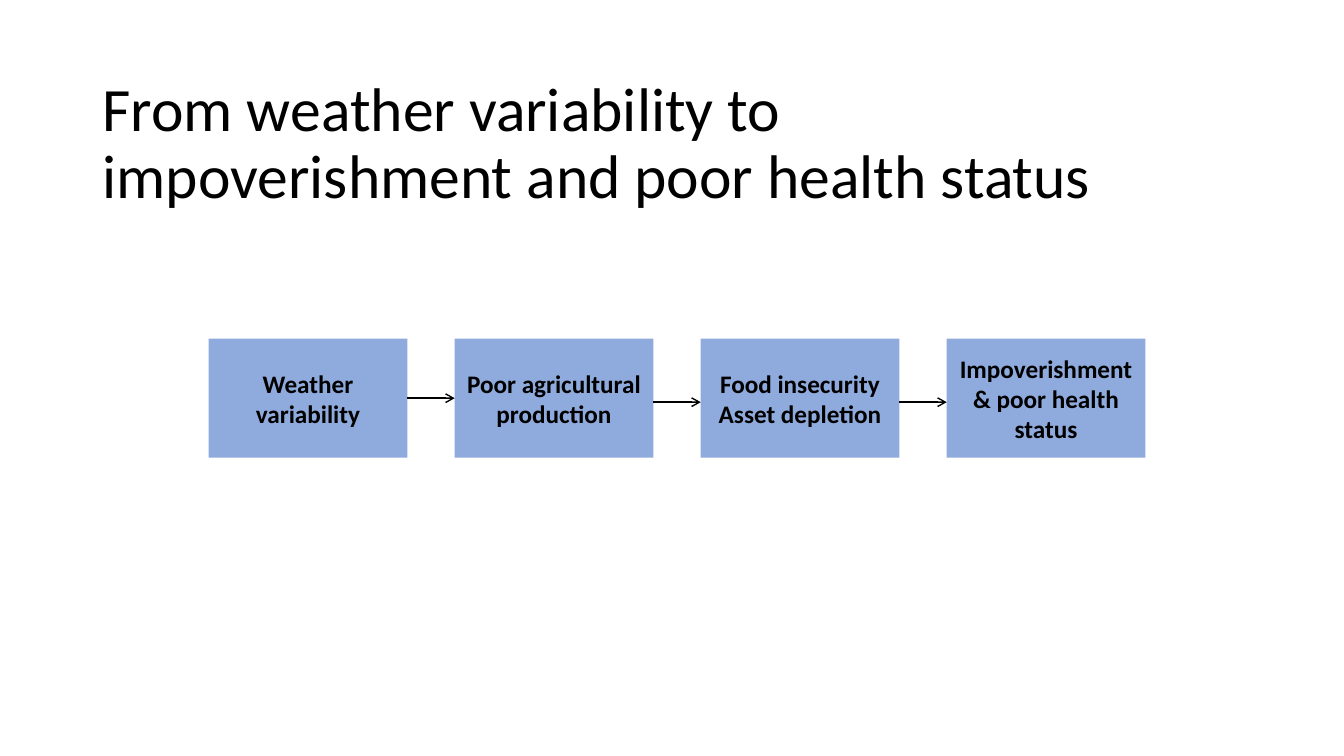
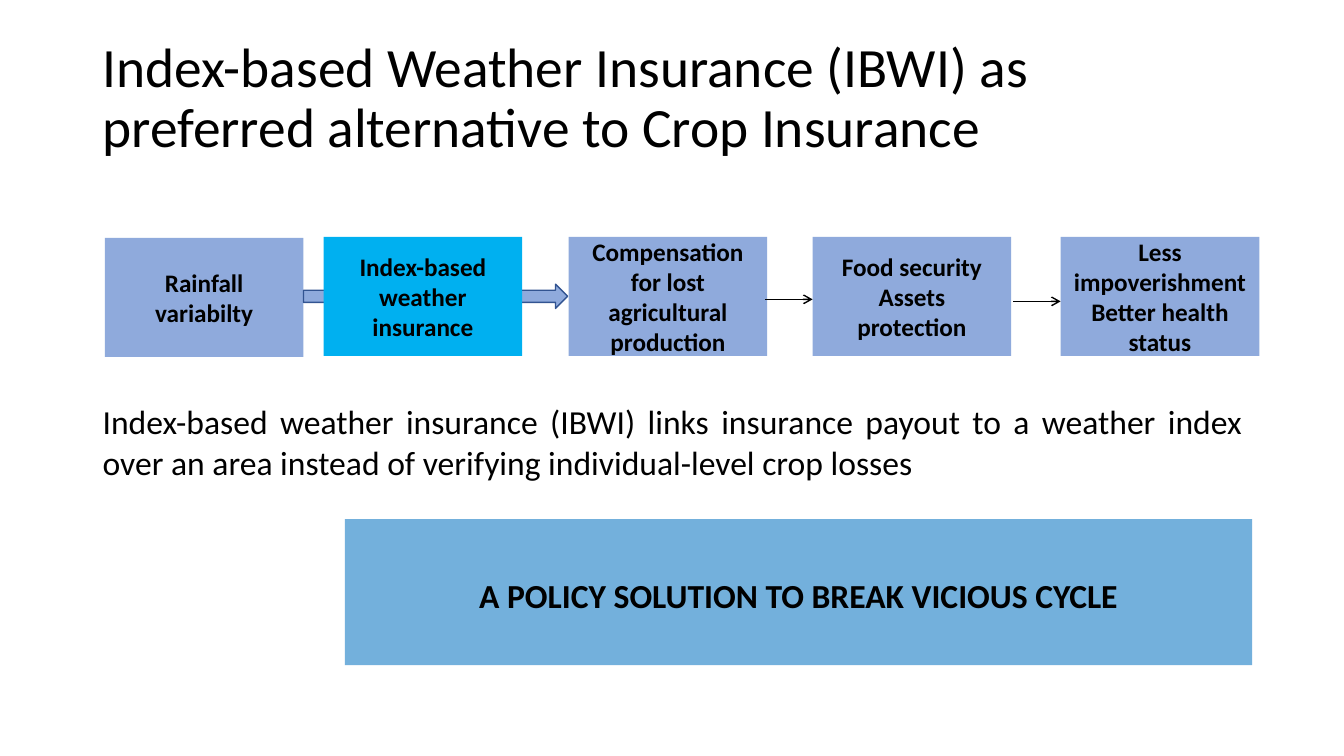
from lxml.etree import SubElement
from pptx import Presentation
from pptx.dml.color import RGBColor
from pptx.enum.shapes import MSO_CONNECTOR, MSO_SHAPE
from pptx.enum.text import MSO_ANCHOR, PP_ALIGN
from pptx.oxml.ns import qn
from pptx.util import Pt

PX = 9144  # EMU in one px; 100 px make an inch
FONT = "Calibri"
COLORS = {
    "text": "000000",
    "step": "8FAADC",
    "insurance": "00B0F0",
    "policy": "0070C0",
    "outline": "325491",
}
STEP_W, STEP_H, ARROW_LENGTH = 197, 118, 47
TITLE_LEFT = 92


def px(*lengths):
    return [length * PX for length in lengths]


def rgb(name):
    return RGBColor.from_string(COLORS[name])


def write(text_frame, text, size, bold=False, align=PP_ALIGN.LEFT,
          anchor=MSO_ANCHOR.MIDDLE, line_spacing=1.0):
    text_frame.word_wrap = True
    text_frame.vertical_anchor = anchor
    text_frame.text = text
    for paragraph in text_frame.paragraphs:
        paragraph.alignment = align
        paragraph.line_spacing = line_spacing
        for run in paragraph.runs:
            run.font.name = FONT
            run.font.size = Pt(size)
            run.font.bold = bold
            run.font.color.rgb = rgb("text")


def add_title(slide, text, size, box):
    title = slide.shapes.add_textbox(*px(*box))
    write(title.text_frame, text, size, line_spacing=0.9)


def add_block(slide, box, fill, kind=MSO_SHAPE.RECTANGLE):
    block = slide.shapes.add_shape(kind, *px(*box))
    block.shadow.inherit = False
    block.fill.solid()
    block.fill.fore_color.rgb = rgb(fill)
    block.line.fill.background()
    return block


def add_step(slide, left, top, text, fill="step"):
    step = add_block(slide, (left, top, STEP_W, STEP_H), fill)
    write(step.text_frame, text, 18, bold=True, align=PP_ALIGN.CENTER)


def add_arrow(slide, tip, y):
    """Thin arrow whose tip touches the left side of a step."""
    arrow = slide.shapes.add_connector(
        MSO_CONNECTOR.STRAIGHT, *px(tip - ARROW_LENGTH, y, tip, y))
    arrow.line.color.rgb = rgb("text")
    arrow.line.width = Pt(1)
    properties = arrow._element.spPr
    SubElement(properties.find(qn("a:ln")), qn("a:tailEnd"), type="arrow")
    SubElement(properties, qn("a:effectLst"))


def add_insurance_arrow(slide, left, top):
    """Wide arrow that passes behind the insurance step."""
    arrow = add_block(slide, (left, top, 262, 24), "step", MSO_SHAPE.RIGHT_ARROW)
    arrow.line.color.rgb = rgb("outline")
    arrow.line.width = Pt(1)


def add_policy_banner(slide, box, text):
    banner = add_block(slide, box, "policy")
    fill_color = banner._element.spPr.find(qn("a:solidFill"))[0]
    SubElement(fill_color, qn("a:alpha"), val="55000")
    write(banner.text_frame, text, 24, bold=True, align=PP_ALIGN.CENTER)
    banner.text_frame.margin_top = 10 * PX


def build_problem_slide(slide):
    add_title(slide, "From weather variability to impoverishment and poor health status",
              44, (TITLE_LEFT, 25, 1017, 238))
    # Chain of causes
    left, top = 207, 336
    causes = [
        ("Weather variability", None),
        ("Poor agricultural production", 59),
        ("Food insecurity\nAsset depletion", 63),
        ("Impoverishment & poor health status", 63),
    ]
    for index, (text, arrow_drop) in enumerate(causes):
        step_left = left + index * (STEP_W + ARROW_LENGTH)
        add_step(slide, step_left, top, text)
        if arrow_drop:
            add_arrow(slide, step_left, top + arrow_drop)


def build_insurance_slide(slide):
    add_title(slide, "Index-based Weather Insurance (IBWI) as preferred alternative to Crop Insurance",
              39.6, (TITLE_LEFT, 40, 1150, 118))
    add_policy_banner(slide, (342, 515, 900, 145),
                      "A POLICY SOLUTION TO BREAK VICIOUS CYCLE")

    # Definition
    definition = slide.shapes.add_textbox(*px(TITLE_LEFT, 393, 1150, 91))
    write(definition.text_frame,
          "Index-based weather insurance (IBWI) links insurance payout to a weather index "
          "over an area instead of verifying individual-level crop losses",
          24, align=PP_ALIGN.JUSTIFY, anchor=MSO_ANCHOR.TOP)

    # Chain with insurance
    top = 235
    add_step(slide, 104, top + 1, "Rainfall variabilty")
    add_insurance_arrow(slide, 104 + STEP_W, top + 47)
    add_step(slide, 321, top, "Index-based weather insurance", "insurance")
    outcomes = [
        (564, "Compensation for lost agricultural production", None),
        (806, "Food security\nAssets protection", 62),
        (1052, "Less impoverishment\nBetter health status", 64),
    ]
    for left, text, arrow_drop in outcomes:
        add_step(slide, left, top, text)
        if arrow_drop:
            add_arrow(slide, left, top + arrow_drop)


def main():
    presentation = Presentation()
    presentation.slide_width, presentation.slide_height = px(1333, 750)
    blank = presentation.slide_layouts[6]
    for build in (build_problem_slide, build_insurance_slide):
        build(presentation.slides.add_slide(blank))
    presentation.save("out.pptx")


if __name__ == "__main__":
    main()
